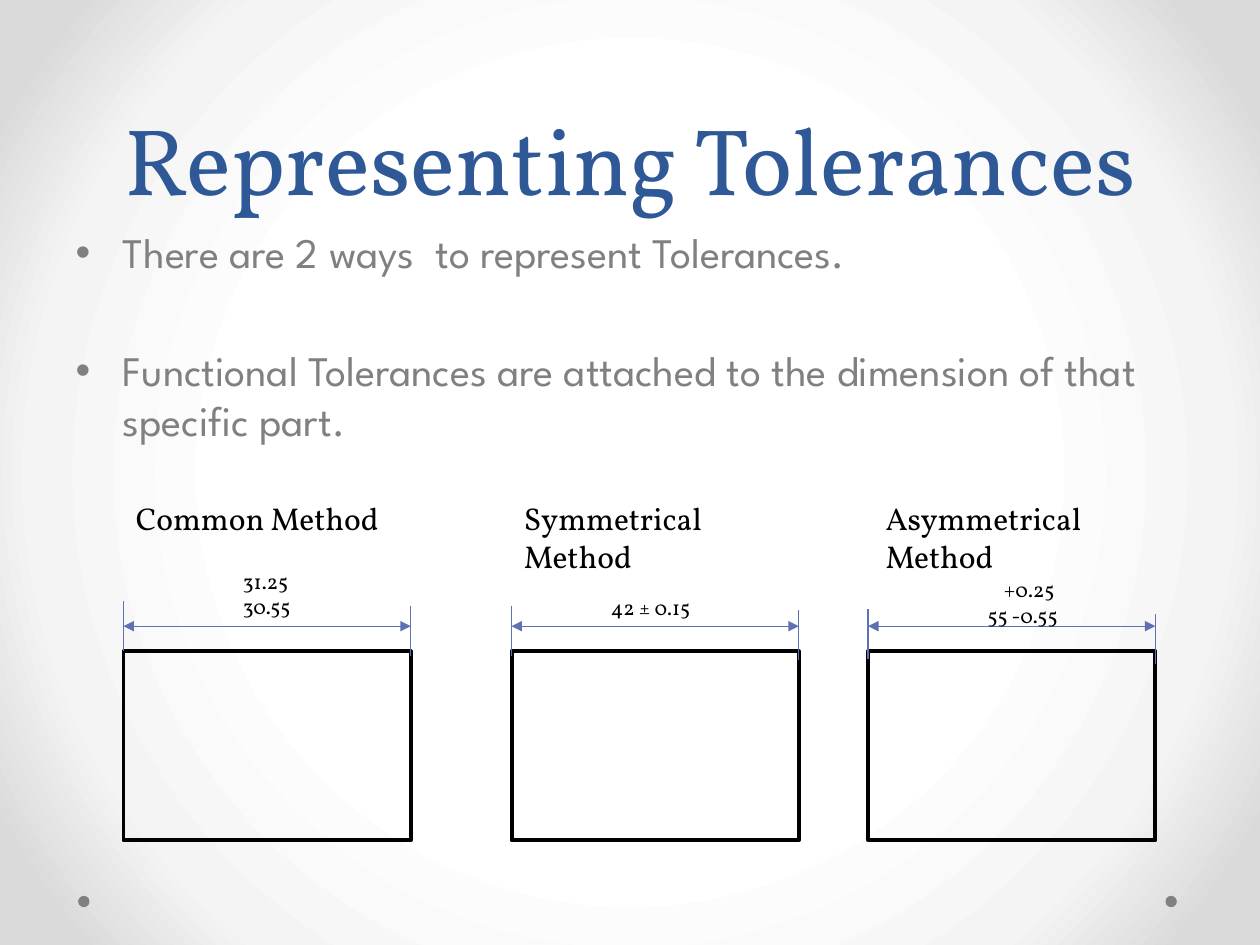
from dataclasses import dataclass

from pptx import Presentation
from pptx.dml.color import RGBColor
from pptx.enum.shapes import MSO_CONNECTOR as Connector, MSO_SHAPE as Shape
from pptx.enum.text import MSO_ANCHOR as Anchor, MSO_AUTO_SIZE as AutoSize, PP_ALIGN as Align
from pptx.oxml import parse_xml
from pptx.oxml.ns import nsdecls, qn
from pptx.oxml.xmlchemy import OxmlElement
from pptx.util import Inches, Pt


@dataclass(frozen=True)
class Theme:
    serif: str = "Vollkorn"
    sans: str = "League Spartan"
    title_color: str = "2F5897"
    grey: str = "808080"
    ink: str = "000000"
    dimension: str = "5C72B2"
    backdrop: tuple = ((50, "FFFFFF"), (76, "F4F4F4"), (92, "DADADA"))
    title_size: float = 54
    body_size: float = 24
    label_size: float = 18
    note_size: float = 12


@dataclass(frozen=True)
class Note:
    left: float
    top: float
    width: float
    height: float
    lines: tuple
    first_indent: float = 0


@dataclass(frozen=True)
class Method:
    name: str
    left: float
    label_left: float
    label_height: float
    left_foot: float
    right_foot: float
    note: Note


THEME = Theme()
PART_TOP, PART_WIDTH, PART_HEIGHT = 5.17, 2.28, 1.5
LABEL_TOP, LABEL_WIDTH = 3.91, 2.2
DIMENSION_Y, EXTENSION = 4.97, 0.4
DOT_LEFTS, DOT_TOP, DOT_SIZE = (0.62, 9.25), 7.11, 0.09
BULLETS = (
    ("There are 2 ways  to represent Tolerances.", 4.8),
    ("Functional Tolerances are attached to the dimension of that specific part.", 38.4),
)
METHODS = (
    Method("Common Method", 0.98, 0.98, 0.4, 5.17, 5.21,
           Note(1.83, 4.46, 0.59, 0.5, ("31.25", "30.55"))),
    Method("Symmetrical Method", 4.06, 4.06, 0.71, 5.21, 5.24,
           Note(4.75, 4.67, 0.9, 0.3, ("42 ± 0.15",))),
    Method("Asymmetrical Method", 6.89, 6.93, 0.71, 5.23, 5.27,
           Note(7.74, 4.53, 0.96, 0.5, ("+0.25", "55 -0.55"), 0.13)),
)


def rgb(color: str) -> RGBColor:
    return RGBColor.from_string(color)


def add_span(para, text: str, font: str, size: float, color: str) -> None:
    span = para.add_run()
    span.text = text
    span.font.name = font
    span.font.size = Pt(size)
    span.font.color.rgb = rgb(color)


def place(box, left: float, top: float, width: float, height: float) -> None:
    box.left, box.top = Inches(left), Inches(top)
    box.width, box.height = Inches(width), Inches(height)


def paint_background(page) -> None:
    page.background.fill.gradient()
    old = page.element.find(".//" + qn("a:gradFill"))
    stops = "".join(
        f'<a:gs pos="{position * 1000}"><a:srgbClr val="{color}"/></a:gs>'
        for position, color in THEME.backdrop
    )
    gradient = parse_xml(
        f'<a:gradFill {nsdecls("a")} rotWithShape="1"><a:gsLst>{stops}</a:gsLst>'
        '<a:path path="circle"><a:fillToRect l="50000" t="50000" r="50000" b="50000"/>'
        "</a:path></a:gradFill>"
    )
    old.getparent().replace(old, gradient)


def fill_title(page) -> None:
    box = page.shapes.title
    place(box, 0.5, 0, 9, 1.75)
    frame = box.text_frame
    frame.auto_size = AutoSize.NONE
    frame.vertical_anchor = Anchor.BOTTOM
    para = frame.paragraphs[0]
    para.alignment = Align.CENTER
    para.line_spacing = Pt(58)
    add_span(para, "Representing Tolerances", THEME.serif, THEME.title_size, THEME.title_color)


def fill_body(page) -> None:
    box = page.placeholders[1]
    place(box, 0.5, 1.75, 9, 4.95)
    frame = box.text_frame
    frame.auto_size = AutoSize.NONE
    for index, (text, gap) in enumerate(BULLETS):
        para = frame.add_paragraph() if index else frame.paragraphs[0]
        para.space_before = Pt(gap)
        add_span(para, text, THEME.sans, THEME.body_size, THEME.grey)


def add_dots(page) -> None:
    for left in DOT_LEFTS:
        dot = page.shapes.add_shape(
            Shape.OVAL, Inches(left), Inches(DOT_TOP), Inches(DOT_SIZE), Inches(DOT_SIZE)
        )
        dot.shadow.inherit = False
        dot.fill.solid()
        dot.fill.fore_color.rgb = rgb(THEME.grey)
        dot.line.fill.background()


def add_text(page, note: Note, size: float) -> None:
    box = page.shapes.add_textbox(
        Inches(note.left), Inches(note.top), Inches(note.width), Inches(note.height)
    )
    frame = box.text_frame
    frame.word_wrap = True
    frame.auto_size = AutoSize.SHAPE_TO_FIT_TEXT
    for index, text in enumerate(note.lines):
        para = frame.add_paragraph() if index else frame.paragraphs[0]
        if note.first_indent and not index:
            para._p.get_or_add_pPr().set("marL", str(Inches(note.first_indent)))
        add_span(para, text, THEME.serif, size, THEME.ink)


def add_line(page, x1: float, y1: float, x2: float, y2: float, arrows: bool = False) -> None:
    line = page.shapes.add_connector(
        Connector.STRAIGHT, Inches(x1), Inches(y1), Inches(x2), Inches(y2)
    )
    line.line.color.rgb = rgb(THEME.dimension)
    line.line.width = Pt(0.75)
    if arrows:
        for tag in ("a:headEnd", "a:tailEnd"):
            end = OxmlElement(tag)
            end.set("type", "triangle")
            line.line._get_or_add_ln().append(end)
    line._element.spPr.append(OxmlElement("a:effectLst"))


def add_method(page, method: Method) -> None:
    part = page.shapes.add_shape(
        Shape.RECTANGLE, Inches(method.left), Inches(PART_TOP),
        Inches(PART_WIDTH), Inches(PART_HEIGHT),
    )
    part.shadow.inherit = False
    part.fill.background()
    part.line.color.rgb = rgb(THEME.ink)
    part.line.width = Pt(2.25)
    label = Note(method.label_left, LABEL_TOP, LABEL_WIDTH, method.label_height, (method.name,))
    add_text(page, label, THEME.label_size)
    right = method.left + PART_WIDTH
    for x, foot in ((method.left, method.left_foot), (right, method.right_foot)):
        add_line(page, x, foot, x, foot - EXTENSION)
    add_line(page, method.left, DIMENSION_Y, right, DIMENSION_Y, arrows=True)
    add_text(page, method.note, THEME.note_size)


def main() -> None:
    """Build the slide on representing tolerances and save it."""
    deck = Presentation()
    deck.slide_width, deck.slide_height = Inches(10), Inches(7.5)
    page = deck.slides.add_slide(deck.slide_layouts[1])
    paint_background(page)
    add_dots(page)
    fill_title(page)
    fill_body(page)
    for method in METHODS:
        add_method(page, method)
    deck.save("out.pptx")


if __name__ == "__main__":
    main()
